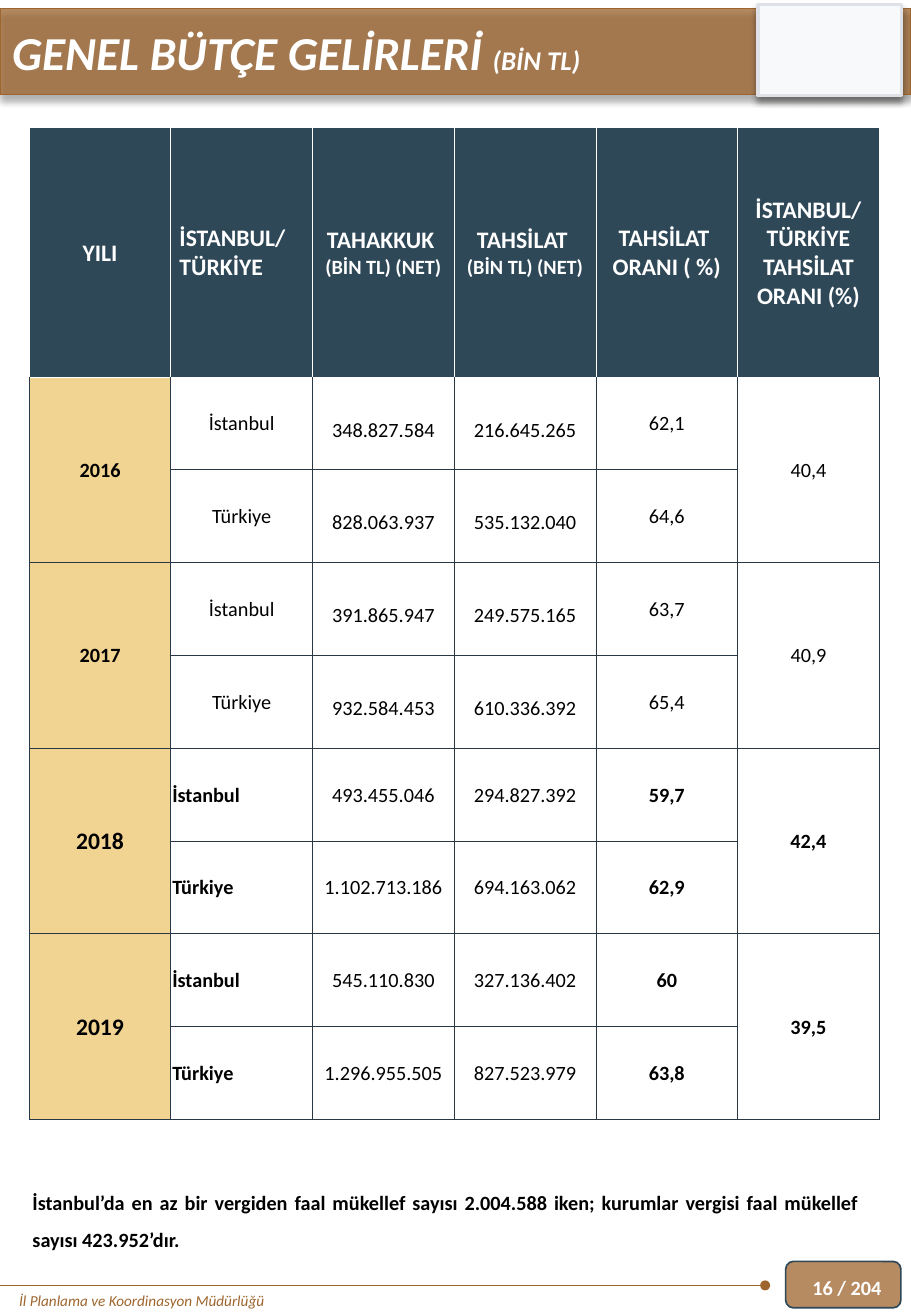
from lxml.etree import SubElement
from pptx import Presentation
from pptx.dml.color import RGBColor
from pptx.enum.shapes import MSO_CONNECTOR as CONN, MSO_SHAPE as SHAPE
from pptx.enum.text import MSO_ANCHOR as ANCHOR, PP_ALIGN as ALIGN
from pptx.oxml.ns import qn
from pptx.util import Cm, Pt

BROWN, NAVY, BORDER, SAND = "9E652E", "2F4858", "283845", "F2D492"
WHITE, BLACK = "FFFFFF", "000000"
MARGIN, HEADER_MARGIN = 0.03, 0.18

# Each heading is a list of paragraphs, each paragraph a list of (line, size)
HEADINGS = [
    [[("YILI", 14)]],
    [[("İSTANBUL/", 14)], [("TÜRKİYE", 14)]],
    [[("TAHAKKUK ", 14), ("(BİN TL) (NET)", 12)]],
    [[("TAHSİLAT ", 14), ("(BİN TL) (NET)", 12)]],
    [[("TAHSİLAT ", 14), ("ORANI ( %)", 14)]],
    [[("İSTANBUL/ TÜRKİYE TAHSİLAT ORANI (%)", 14)]],
]
# Year, share of İstanbul, then accrual, collection and rate per region
YEARS = [
    ("2016", "40,4", [("İstanbul", "348.827.584", "216.645.265", "62,1"),
                      ("Türkiye", "828.063.937", "535.132.040", "64,6")]),
    ("2017", "40,9", [("İstanbul", "391.865.947", "249.575.165", "63,7"),
                      ("Türkiye", "932.584.453", "610.336.392", "65,4")]),
    ("2018", "42,4", [("İstanbul", "493.455.046", "294.827.392", "59,7"),
                      ("Türkiye", "1.102.713.186", "694.163.062", "62,9")]),
    ("2019", "39,5", [("İstanbul", "545.110.830", "327.136.402", "60"),
                      ("Türkiye", "1.296.955.505", "827.523.979", "63,8")]),
]


def rgb(color):
    return RGBColor.from_string(color)


def box(at):
    return [Cm(v) for v in at]


def set_attrs(target, values):
    for name, value in values.items():
        setattr(target, name, value)


def add_run(p, text, size, color=BLACK, **fmt):
    r = p.add_run()
    r.text = text
    set_attrs(r.font, {"name": "Calibri", "size": Pt(size), **fmt})
    r.font.color.rgb = rgb(color)


def add_shape(s, kind, at, fill, line=None, width=1, alpha=None, shadow=False):
    sp = s.shapes.add_shape(kind, *box(at))
    sp.fill.solid()
    sp.fill.fore_color.rgb = rgb(fill)
    if alpha:
        clr = sp.element.spPr.find(qn("a:solidFill"))[0]
        SubElement(clr, qn("a:alpha"), val=str(alpha * 1000))
    if line:
        sp.line.color.rgb = rgb(line)
        sp.line.width = Pt(width)
    else:
        sp.line.fill.background()
    sp.shadow.inherit = False
    if shadow:
        effects = sp.element.spPr.find(qn("a:effectLst"))
        outer = SubElement(effects, qn("a:outerShdw"), blurRad=str(Pt(4)),
                           dist=str(Pt(3)), dir="5400000", rotWithShape="0")
        clr = SubElement(outer, qn("a:srgbClr"), val=BLACK)
        SubElement(clr, qn("a:alpha"), val="40000")
    return sp


def write(sp, runs, anchor=ANCHOR.TOP, **para):
    tf = sp.text_frame
    set_attrs(tf, {"word_wrap": True, "vertical_anchor": anchor})
    p = tf.paragraphs[0]
    set_attrs(p, {"alignment": ALIGN.LEFT, **para})
    for text, size, color, fmt in runs:
        add_run(p, text, size, color, **fmt)


def add_footer_line(s, start, end, y):
    line = s.shapes.add_connector(CONN.STRAIGHT, Cm(start), Cm(y), Cm(end), Cm(y))
    line.line.color.rgb = rgb(BROWN)
    line.line.width = Pt(0.5)
    SubElement(line.line._get_or_add_ln(), qn("a:headEnd"), type="oval")
    SubElement(line.element.spPr, qn("a:effectLst"))


def format_cell(cell, fill, border, top=None, left=MARGIN):
    tc_pr = cell._tc.get_or_add_tcPr()
    for side in "LRTB":
        ln = SubElement(tc_pr, qn(f"a:ln{side}"), w=str(Pt(0.5)))
        solid = SubElement(ln, qn("a:solidFill"))
        color = top if top and side == "T" else border
        SubElement(solid, qn("a:srgbClr"), val=color)
    cell.fill.solid()
    cell.fill.fore_color.rgb = rgb(fill)
    set_attrs(cell, {"vertical_anchor": ANCHOR.MIDDLE, "margin_left": Cm(left),
                     "margin_right": Cm(MARGIN), "margin_top": Cm(MARGIN),
                     "margin_bottom": 0})


def write_cell(cell, text, size=12, bold=False, align=ALIGN.CENTER, spacing=None):
    p = cell.text_frame.paragraphs[0]
    set_attrs(p, {"alignment": align, "line_spacing": spacing})
    add_run(p, text, size, bold=bold)


def fill_header(table):
    for col, heading in enumerate(HEADINGS):
        cell = table.cell(0, col)
        align = ALIGN.LEFT if col == 1 else ALIGN.CENTER
        format_cell(cell, NAVY, WHITE, left=HEADER_MARGIN if col == 1 else MARGIN)
        tf = cell.text_frame
        for i, lines in enumerate(heading):
            p = tf.add_paragraph() if i else tf.paragraphs[0]
            p.alignment = align
            for j, (text, size) in enumerate(lines):
                if j:
                    p.add_line_break()
                add_run(p, text, size, WHITE, bold=True)


def fill_year(table, row, year, share, regions):
    recent = year >= "2018"
    for i, values in enumerate(regions):
        for col in range(len(HEADINGS)):
            format_cell(table.cell(row + i, col), WHITE if col else SAND, BORDER,
                        top=WHITE if row + i == 1 else None)
        for col, value in enumerate(values, 1):
            amount = col in (2, 3)
            write_cell(table.cell(row + i, col), value,
                       bold=recent and not amount,
                       align=ALIGN.JUSTIFY if recent and col == 1 else ALIGN.CENTER,
                       spacing=1.5 if amount and not recent else None)
    for col in (0, 5):
        table.cell(row, col).merge(table.cell(row + 1, col))
    write_cell(table.cell(row, 0), year, 14 if recent else 12, True)
    write_cell(table.cell(row, 5), share, bold=recent)


def add_revenue_table(s):
    rows = 1 + 2 * len(YEARS)
    table = s.shapes.add_table(rows, len(HEADINGS),
                               *box((0.61, 2.67, 17.78, 20.73))).table
    set_attrs(table, {"first_row": False, "horz_banding": False})
    for column in table.columns:
        column.width = Cm(17.78 / len(HEADINGS))
    for i, row in enumerate(table.rows):
        row.height = Cm(1.94 if i else 5.21)
    fill_header(table)
    for i, entry in enumerate(YEARS):
        fill_year(table, 1 + 2 * i, *entry)


def main():
    prs = Presentation()
    set_attrs(prs, {"slide_width": Cm(19.05), "slide_height": Cm(27.51)})
    s = prs.slides.add_slide(prs.slide_layouts[5])

    # Banner, emblem frame and footer
    add_shape(s, SHAPE.ROUNDED_RECTANGLE, (16.43, 26.37, 2.41, 0.97), BROWN, NAVY,
              alpha=75)
    add_shape(s, SHAPE.RECTANGLE, (0, 0.18, 19.05, 1.8), BROWN, BROWN,
              alpha=75, shadow=True)
    add_shape(s, SHAPE.RECTANGLE, (15.85, 0.1, 3, 1.9), "F8F9FA", "DEE2E6", 2,
              shadow=True)
    add_footer_line(s, 16, 0, 26.87)
    footer = s.shapes.add_textbox(*box((0.15, 26.87, 11.91, 0.64)))
    write(footer, [("İl Planlama ve Koordinasyon Müdürlüğü", 9, BROWN,
                    {"italic": True})])

    # Title, raised above the banner
    title = s.shapes.title
    title.element.getparent().append(title.element)
    set_attrs(title, dict(zip(("left", "top", "width", "height"),
                              box((0, 0.36, 19.05, 1.45)))))
    slanted = {"bold": True, "italic": True}
    write(title, [("GENEL BÜTÇE GELİRLERİ ", 28, WHITE, slanted),
                  ("(BİN TL)", 16, WHITE, slanted)], space_before=Pt(0))

    # Note, table and page number
    note = add_shape(s, SHAPE.RECTANGLE, (0.43, 24.51, 17.78, 1.73), WHITE)
    write(note, [("İstanbul’da en az bir vergiden faal mükellef sayısı 2.004.588 "
                  "iken; kurumlar vergisi faal mükellef sayısı 423.952’dır.",
                  12, BLACK, {"bold": True})],
          alignment=ALIGN.JUSTIFY, line_spacing=1.5)
    add_revenue_table(s)
    page = s.shapes.add_textbox(*box((16.74, 26.37, 2.92, 1.07)))
    write(page, [("16 / 204", 12, WHITE, {"bold": True})], ANCHOR.MIDDLE)

    prs.save("out.pptx")


if __name__ == "__main__":
    main()
